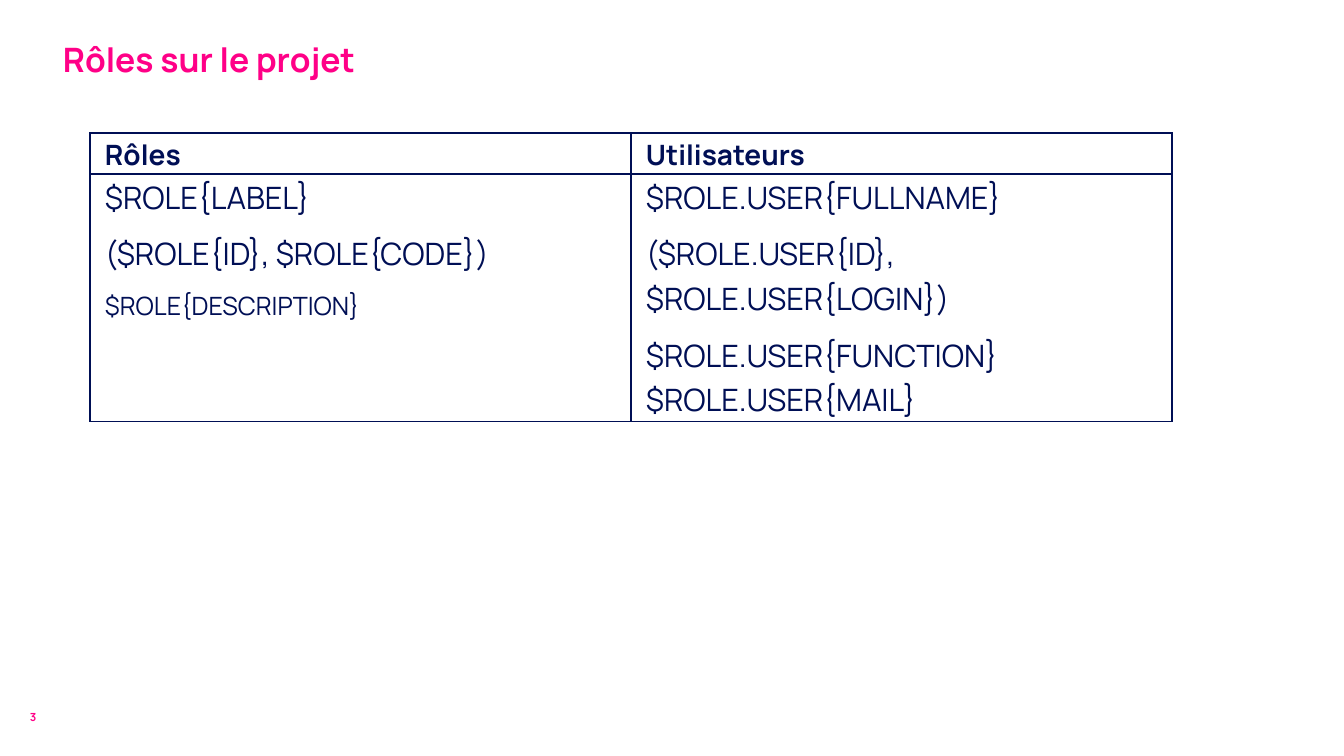
from lxml import etree
from pptx import Presentation
from pptx import util as u
from pptx.dml.color import RGBColor
from pptx.enum import text
from pptx.oxml.ns import qn

PX = 914400 / 100.8
FONT = "Manrope"
PINK = "FF0087"
NAVY = "000F55"

LABELS = [
    ("Rôles sur le projet", (53, 29, 1212, 55), 24, text.MSO_ANCHOR.BOTTOM),
    ("3", (20, 703, 59, 28), 8, text.MSO_ANCHOR.MIDDLE),
]
ROLES = [
    [
        [("Rôles", 20)],
        [("Utilisateurs", 20)],
    ],
    [
        [
            ("$ROLE{LABEL}", 22),
            ("($ROLE{ID}, $ROLE{CODE})", 22),
            ("$ROLE{DESCRIPTION}", 18),
        ],
        [
            ("$ROLE.USER{FULLNAME}", 22),
            ("($ROLE.USER{ID}, $ROLE.USER{LOGIN})", 22),
            ("$ROLE.USER{FUNCTION}\n$ROLE.USER{MAIL}", 22),
        ],
    ],
]
TABLE_LEFT, TABLE_TOP = 90, 133
COLUMN_WIDTH = 541
ROW_HEIGHTS = [41, 247]
CELL_MARGIN = 15


def px(length):
    return u.Emu(round(length * PX))


def color(value):
    return RGBColor.from_string(value)


def write(paragraph, content, size, shade, bold):
    paragraph.text = content
    paragraph.font.size = u.Pt(size)
    for run in paragraph.runs:
        run.font.name = FONT
        run.font.size = u.Pt(size)
        run.font.bold = bold
        run.font.color.rgb = color(shade)


def add_label(slide, content, box, size, anchor):
    frame = slide.shapes.add_textbox(*map(px, box)).text_frame
    frame.word_wrap = True
    frame.vertical_anchor = anchor
    write(frame.paragraphs[0], content, size, PINK, True)


def add_borders(cell):
    properties = cell._tc.get_or_add_tcPr()
    for side in ("lnL", "lnR", "lnT", "lnB"):
        line = etree.SubElement(properties, qn("a:" + side), w=str(u.Pt(1)))
        fill = etree.SubElement(line, qn("a:solidFill"))
        etree.SubElement(fill, qn("a:srgbClr"), val=NAVY)


def fill_cell(cell, entries, bold):
    add_borders(cell)
    cell.fill.background()
    cell.margin_left = cell.margin_right = px(CELL_MARGIN)
    cell.margin_top = cell.margin_bottom = 0
    frame = cell.text_frame
    for index, (content, size) in enumerate(entries):
        paragraph = frame.add_paragraph() if index else frame.paragraphs[0]
        write(paragraph, content, size, NAVY, bold)
        paragraph.line_spacing = 1.07
        paragraph.space_after = u.Pt(8)


def add_roles(slide):
    columns = len(ROLES[0])
    table = slide.shapes.add_table(
        len(ROLES), columns, px(TABLE_LEFT), px(TABLE_TOP),
        px(columns * COLUMN_WIDTH), px(sum(ROW_HEIGHTS)),
    ).table
    table.horz_banding = False
    for column in table.columns:
        column.width = px(COLUMN_WIDTH)
    for row_index, (cells, height) in enumerate(zip(ROLES, ROW_HEIGHTS)):
        table.rows[row_index].height = px(height)
        for column_index, entries in enumerate(cells):
            fill_cell(table.cell(row_index, column_index), entries, row_index == 0)


def main():
    presentation = Presentation()
    presentation.slide_width = px(1344)
    presentation.slide_height = px(756)
    slide = presentation.slides.add_slide(presentation.slide_layouts[6])
    add_roles(slide)
    for label in LABELS:
        add_label(slide, *label)
    presentation.save("out.pptx")


if __name__ == "__main__":
    main()
